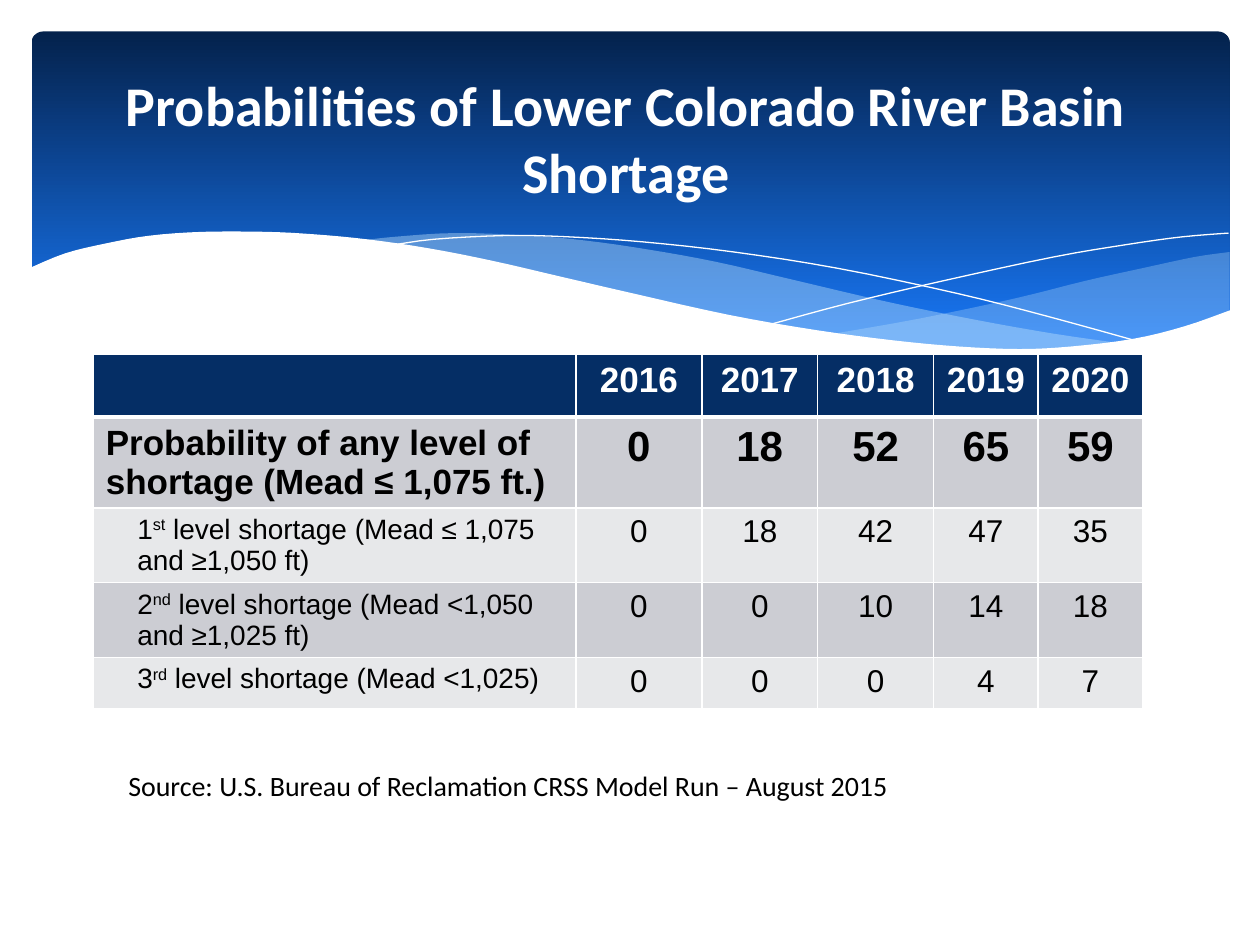
from lxml.etree import SubElement
from pptx import Presentation
from pptx.dml.color import RGBColor
from pptx.enum.shapes import MSO_SHAPE
from pptx.enum.text import MSO_ANCHOR, MSO_AUTO_SIZE, PP_ALIGN
from pptx.oxml.ns import qn
from pptx.util import Inches, Pt

WHITE = RGBColor(0xFF, 0xFF, 0xFF)
BLACK = RGBColor(0, 0, 0)
NIGHT = RGBColor(0x04, 0x22, 0x4C)
BLUE = RGBColor(0x18, 0x76, 0xF4)
ICE = RGBColor(0xC6, 0xE7, 0xFC)
NAVY = RGBColor(0x05, 0x2E, 0x65)
GREY = RGBColor(0xCC, 0xCD, 0xD3)
PALE = RGBColor(0xE7, 0xE8, 0xEA)

RIGHT_SWELL_TOP = [(9.76, 2), (9.48, 2.04), (9.06, 2.13), (8.61, 2.23), (8.05, 2.37),
                   (7.29, 2.53), (6.61, 2.65)]
RIGHT_SWELL_BOTTOM = [(6.61, 2.65), (7.05, 2.71), (7.57, 2.76), (8.03, 2.78), (8.54, 2.76),
                      (8.97, 2.7), (9.35, 2.62), (9.76, 2.47)]
LONG_SWELL_TOP = [(8.93, 2.73), (8.37, 2.65), (7.75, 2.54), (7.06, 2.4), (6.29, 2.22),
                  (5.69, 2.08), (5.14, 1.98), (4.65, 1.91), (4.2, 1.87), (3.61, 1.85),
                  (3.13, 1.88), (2.86, 1.91)]
LONG_SWELL_BOTTOM = [(2.86, 1.91), (3.42, 1.99), (4.04, 2.11), (4.49, 2.22), (5.3, 2.4),
                     (6.01, 2.55), (6.65, 2.66), (7.22, 2.74), (7.85, 2.78), (8.38, 2.78),
                     (8.93, 2.73)]
FALLING_LINE = [(3.09, 1.95), (3.44, 1.9), (4.01, 1.87), (4.5, 1.88), (5.1, 1.92),
                (5.82, 2), (6.65, 2.13), (7.6, 2.33), (8.31, 2.51), (9.07, 2.72)]
RISING_LINE = [(6.13, 2.57), (6.72, 2.41), (7.48, 2.23), (8.36, 2.04), (8.95, 1.94),
               (9.38, 1.88), (9.75, 1.85)]
SHORE = [(9.77, 2.46), (9.4, 2.59), (8.99, 2.69), (8.5, 2.75), (8.09, 2.77), (7.61, 2.75),
         (7.08, 2.7), (6.48, 2.62), (5.79, 2.5), (5.03, 2.33), (4.47, 2.2), (3.91, 2.07),
         (3.4, 1.97), (2.92, 1.9), (2.5, 1.86), (2.11, 1.84), (1.61, 1.84), (1.19, 1.87),
         (0.85, 1.93), (0.52, 2.01), (0.23, 2.13)]

COLUMN_WIDTHS = [3.83, 1, 0.92, 0.92, 0.83, 0.83]
YEARS = ["2016", "2017", "2018", "2019", "2020"]
TOTAL_LABEL = "Probability of any level of shortage (Mead ≤ 1,075 ft.)"
TOTALS = [0, 18, 52, 65, 59]
LEVELS = [
    ("1", "st", " level shortage (Mead ≤ 1,075 and ≥1,050 ft)", [0, 18, 42, 47, 35]),
    ("2", "nd", " level shortage (Mead <1,050 and ≥1,025 ft)", [0, 0, 10, 14, 18]),
    ("3", "rd", " level shortage (Mead <1,025)", [0, 0, 0, 4, 7]),
]


def smooth(knots, steps=4):
    padded = [knots[0], *knots, knots[-1]]
    points = [knots[0]]
    for a, b, c, d in zip(padded, padded[1:], padded[2:], padded[3:]):
        for step in range(1, steps + 1):
            t = step / steps
            points.append(tuple(
                q + t / 2 * (r - p + t * (2 * p - 5 * q + 4 * r - s + t * (3 * (q - r) + s - p)))
                for p, q, r, s in zip(a, b, c, d)))
    return points


class SlideBuilder:
    heading_font = "Calibri"
    table_font = "Arial"

    def __init__(self, deck):
        self.page = deck.slides.add_slide(deck.slide_layouts[5])
        self.shapes = self.page.shapes

    def style(self, para, name, size, color, bold=False, align=PP_ALIGN.LEFT):
        para.alignment = align
        para.font.name = name
        para.font.size = Pt(size)
        para.font.bold = bold
        para.font.color.rgb = color

    def banner(self, left, top, width, height):
        box = self.shapes.add_shape(MSO_SHAPE.ROUNDED_RECTANGLE, Inches(left), Inches(top),
                                    Inches(width), Inches(height))
        box.adjustments[0] = 0.034
        box.shadow.inherit = False
        box.line.fill.background()
        box.fill.gradient()
        box.fill.gradient_angle = 270
        for stop, position, color in zip(box.fill.gradient_stops, (0, 0.9), (NIGHT, BLUE)):
            stop.position = position
            stop.color.rgb = color

    def outline(self, points, closed):
        corners = [(Inches(x), Inches(y)) for x, y in points]
        builder = self.shapes.build_freeform(*corners[0])
        builder.add_line_segments(corners[1:], close=closed)
        shape = builder.convert_to_shape()
        shape.shadow.inherit = False
        return shape

    def wave(self, points, color, opacity=100):
        shape = self.outline(points, True)
        shape.line.fill.background()
        shape.fill.solid()
        shape.fill.fore_color.rgb = color
        if opacity < 100:
            tint = shape._element.spPr.find(qn("a:solidFill"))[0]
            SubElement(tint, qn("a:alpha"), val=str(opacity * 1000))

    def ripple(self, knots):
        shape = self.outline(smooth(knots), False)
        shape.fill.background()
        shape.line.color.rgb = WHITE
        shape.line.width = Pt(0)

    def title(self, text, left, top, width, height):
        box = self.shapes.title
        box.left, box.top = Inches(left), Inches(top)
        box.width, box.height = Inches(width), Inches(height)
        self.shapes._spTree.append(box._element)
        frame = box.text_frame
        frame.text = text
        frame.word_wrap = True
        frame.auto_size = MSO_AUTO_SIZE.NONE
        frame.vertical_anchor = MSO_ANCHOR.MIDDLE
        self.style(frame.paragraphs[0], self.heading_font, 32, WHITE, True, PP_ALIGN.CENTER)

    def text(self, text, left, top, width, height):
        box = self.shapes.add_textbox(Inches(left), Inches(top), Inches(width), Inches(height))
        box.text_frame.word_wrap = True
        box.text_frame.text = text
        self.style(box.text_frame.paragraphs[0], self.heading_font, 16, BLACK)

    def table(self, left, top, widths, heights):
        frame = self.shapes.add_table(len(heights), len(widths), Inches(left), Inches(top),
                                      Inches(sum(widths)), Inches(sum(heights)))
        for column, width in zip(frame.table.columns, widths):
            column.width = Inches(width)
        for row, height in zip(frame.table.rows, heights):
            row.height = Inches(height)
        return frame.table

    def cell(self, cell, spans, fill, size, color=BLACK, bold=False,
             align=PP_ALIGN.CENTER, indent=0, bottom=1):
        properties = cell._tc.get_or_add_tcPr()
        for side, width in (("L", 1), ("R", 1), ("T", 1), ("B", bottom)):
            border = SubElement(properties, qn(f"a:ln{side}"), w=str(Pt(width)))
            paint = SubElement(border, qn("a:solidFill"))
            SubElement(paint, qn("a:srgbClr"), val=str(WHITE))
        cell.fill.solid()
        cell.fill.fore_color.rgb = fill
        para = cell.text_frame.paragraphs[0]
        if indent:
            para_properties = para._p.get_or_add_pPr()
            para_properties.set("marL", str(Inches(indent)))
            para_properties.set("indent", "0")
        for position, text in enumerate(spans):
            span = para.add_run()
            span.text = text
            if position == 1:
                span._r.get_or_add_rPr().set("baseline", "30000")
        self.style(para, self.table_font, size, color, bold, align)


def main():
    deck = Presentation()
    deck.slide_width, deck.slide_height = Inches(10), Inches(7.5)
    slide = SlideBuilder(deck)

    slide.banner(0.25, 0.25, 9.51, 2.7)
    slide.wave(smooth(RIGHT_SWELL_TOP) + smooth(RIGHT_SWELL_BOTTOM), ICE, 29)
    slide.wave(smooth(LONG_SWELL_TOP) + smooth(LONG_SWELL_BOTTOM), ICE, 40)
    slide.ripple(FALLING_LINE)
    slide.ripple(RISING_LINE)
    slide.wave(smooth(SHORE) + [(0.23, 3.29), (9.77, 3.29)], WHITE)

    table = slide.table(0.74, 2.81, COLUMN_WIDTHS, [0.5] + [0.41] * 4)
    slide.cell(table.cell(0, 0), [], NAVY, 20, WHITE, True, bottom=3)
    for column, year in enumerate(YEARS, 1):
        slide.cell(table.cell(0, column), [year], NAVY, 20, WHITE, True, bottom=3)
    slide.cell(table.cell(1, 0), [TOTAL_LABEL], GREY, 20, bold=True, align=PP_ALIGN.LEFT)
    for column, value in enumerate(TOTALS, 1):
        slide.cell(table.cell(1, column), [str(value)], GREY, 24, bold=True)
    for row, (*label, values) in enumerate(LEVELS, 2):
        fill = GREY if row % 2 else PALE
        slide.cell(table.cell(row, 0), label, fill, 16, align=PP_ALIGN.LEFT, indent=0.25)
        for column, value in enumerate(values, 1):
            slide.cell(table.cell(row, column), [str(value)], fill, 18)

    slide.title("Probabilities of Lower Colorado River Basin Shortage", 0.62, 0.5, 8.7, 1.18)
    slide.text("Source: U.S. Bureau of Reclamation CRSS Model Run – August 2015",
               0.92, 6.05, 8.25, 0.37)
    deck.save("out.pptx")


if __name__ == "__main__":
    main()
